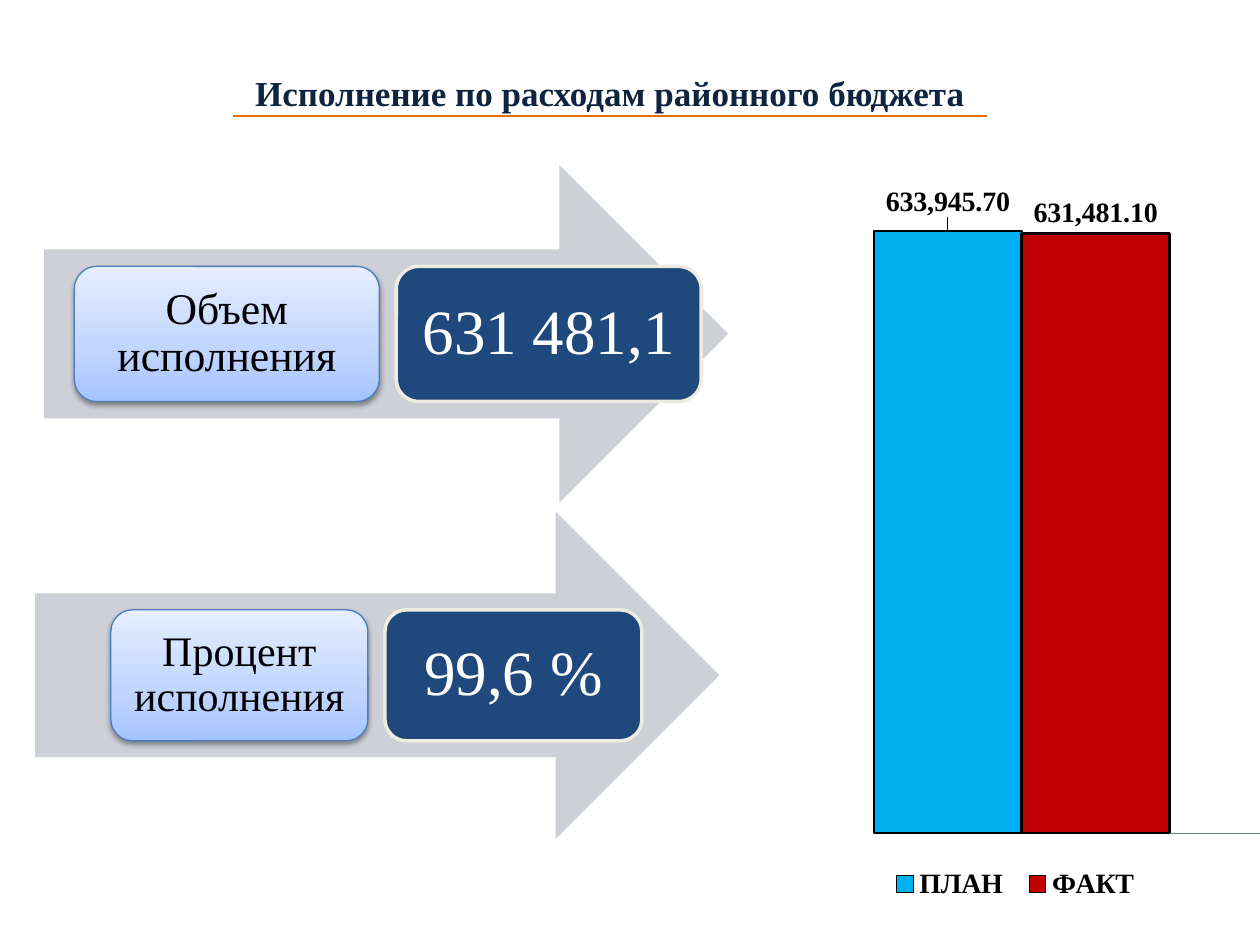
from dataclasses import dataclass

from pptx import Presentation, util as u
from pptx.chart.data import CategoryChartData
from pptx.dml.color import RGBColor
from pptx.enum import chart as ch, shapes as sh, text as tx
from pptx.oxml import parse_xml
from pptx.oxml.ns import nsdecls, qn

COLS, ROWS = 100, 75
FACE = "Times New Roman"
HUES = {
    "title": "0F243E", "rule": "E46C0A", "arrow": "CDD0D7",
    "edge": "4B7EBC", "navy": "1F497D", "cream": "EEECE1",
    "plan": "00B0F0", "fact": "C00000", "rest": "9BBB59",
    "axis": "6B7B7B", "black": "000000", "white": "FFFFFF",
}
BLEND = ((0, "A4C4FF"), (35, "BFD4FF"), (100, "E6EEFF"))
FORM = "#,##0.00"


@dataclass
class Band:
    left: float
    top: float
    high: float
    start: float
    wide: float
    name: str
    size: int
    value: str


@dataclass
class Bar:
    name: str
    value: float
    hue: str
    edge: str
    line: float


BANDS = (
    Band(2.8, 40.6, 26, 8.8, 20.4, "Процент исполнения", 24, "99,6 %"),
    Band(3.5, 13.1, 26.8, 5.9, 24.2, "Объем исполнения", 25, "631 481,1"),
)
BARS = (
    Bar("ПЛАН", 633945.7, "plan", "black", 1),
    Bar("ФАКТ", 631481.1, "fact", "black", 1.5),
    Bar("Series 3", 0, "rest", "axis", 0.25),
)

deck = Presentation()
deck.slide_width, deck.slide_height = u.Inches(10), u.Inches(7.5)
slide = deck.slides.add_slide(deck.slide_layouts[6])


def col(n: float) -> int:
    return int(deck.slide_width * n / COLS)


def row(n: float) -> int:
    return int(deck.slide_height * n / ROWS)


def area(x: float, y: float, w: float, h: float) -> tuple:
    return col(x), row(y), col(w), row(h)


def rgb(key: str) -> RGBColor:
    return RGBColor.from_string(HUES[key])


def style(font, size: float, hue: str, bold: bool = False) -> None:
    font.name, font.size, font.bold = FACE, u.Pt(size), bold
    font.color.rgb = rgb(hue)


def stroke(line, hue: str, width: float) -> None:
    line.color.rgb, line.width = rgb(hue), u.Pt(width)


def paint(shape, hue: str) -> None:
    shape.fill.solid()
    shape.fill.fore_color.rgb = rgb(hue)


def write(shape, words: str, size: float, hue: str, pad: float) -> None:
    frame = shape.text_frame
    frame.text = words
    frame.word_wrap = True
    frame.vertical_anchor = tx.MSO_ANCHOR.MIDDLE
    frame.margin_left = frame.margin_right = u.Inches(pad)
    frame.margin_top = frame.margin_bottom = u.Inches(pad)
    para = frame.paragraphs[0]
    para.alignment = tx.PP_ALIGN.CENTER
    para.line_spacing = 0.9
    style(para.runs[0].font, size, hue)


def gloss(shape) -> None:
    stops = "".join(
        f'<a:gs pos="{at * 1000}"><a:srgbClr val="{hue}"/></a:gs>'
        for at, hue in BLEND)
    props = shape._element.spPr
    props.insert(2, parse_xml(
        f'<a:gradFill {nsdecls("a")} rotWithShape="1"><a:gsLst>{stops}</a:gsLst>'
        '<a:lin ang="16200000" scaled="0"/></a:gradFill>'))
    props.find(qn("a:effectLst")).append(parse_xml(
        f'<a:outerShdw {nsdecls("a")} blurRad="{u.Pt(3.1)}" dist="{u.Pt(1.6)}" '
        'dir="5400000" rotWithShape="0"><a:srgbClr val="000000">'
        '<a:alpha val="38000"/></a:srgbClr></a:outerShdw>'))


def draw_band(band: Band) -> None:
    group = slide.shapes.add_group_shape().shapes
    arrow = group.add_shape(
        sh.MSO_SHAPE.RIGHT_ARROW, *area(band.left, band.top, 54.3, band.high))
    arrow.shadow.inherit = False
    paint(arrow, "arrow")
    arrow.line.fill.background()
    top, high = band.top + band.high * 0.3, band.high * 0.4
    label, total = (
        group.add_shape(sh.MSO_SHAPE.ROUNDED_RECTANGLE,
                        *area(band.start + i * (band.wide + 1.35), top, band.wide, high))
        for i in range(2))
    for box in (label, total):
        box.shadow.inherit = False
    gloss(label)
    stroke(label.line, "edge", 0.75)
    write(label, band.name, band.size, "black", 0.05)
    paint(total, "navy")
    stroke(total.line, "cream", 2)
    write(total, band.value, 36, "white", 0.1)


def place(x: float, y: float, w: float = 0, h: float = 0, inner: bool = False):
    parts = [("layoutTarget", "inner")] if inner else []
    parts += [("xMode", "edge"), ("yMode", "edge")] if w else []
    parts += [("x", x), ("y", y)]
    parts += [("w", w), ("h", h)] if w else []
    body = "".join(f'<c:{tag} val="{val}"/>' for tag, val in parts)
    return parse_xml(f'<c:layout {nsdecls("c")}><c:manualLayout>{body}'
                     '</c:manualLayout></c:layout>')


def draw_chart() -> None:
    data = CategoryChartData(number_format=FORM)
    data.categories = ["1"]
    for bar in BARS:
        data.add_series(bar.name, [bar.value])
    chart = slide.shapes.add_chart(
        ch.XL_CHART_TYPE.COLUMN_CLUSTERED, *area(57.9, 5.2, 56.7, 67.7), data).chart
    style(chart.font, 16, "black")
    chart.has_title = False
    axis = chart.value_axis
    axis.minimum_scale, axis.maximum_scale = 0, 700000
    axis.has_major_gridlines = False
    axis.visible = chart.category_axis.visible = False
    plot = chart.plots[0]
    plot.gap_width, plot.overlap, plot.vary_by_categories = 150, 0, False
    for bar, series in zip(BARS, plot.series):
        paint(series.format, bar.hue)
        stroke(series.format.line, bar.edge, bar.line)
        if bar.value:
            labels = series.data_labels
            labels.show_value = True
            labels.number_format, labels.number_format_is_linked = FORM, False
            labels.position = ch.XL_LABEL_POSITION.OUTSIDE_END
            style(labels.font, 16, "black", True)
    mark = plot.series[0].points[0].data_label
    mark.position = ch.XL_LABEL_POSITION.OUTSIDE_END
    style(mark.font, 16, "black", True)
    node = plot.series[0]._element.find(".//" + qn("c:dLbl"))
    node.insert(1, place(0, -0.01))
    node.insert(2, parse_xml(
        f'<c:numFmt {nsdecls("c")} formatCode="{FORM}" sourceLinked="0"/>'))

    chart.has_legend = True
    legend = chart.legend
    legend.position = ch.XL_LEGEND_POSITION.BOTTOM
    legend.include_in_layout = False
    style(legend.font, 16, "black", True)
    root = legend._element
    for old in root.findall(qn("c:layout")):
        root.remove(old)
    root.insert(1, parse_xml(
        f'<c:legendEntry {nsdecls("c")}><c:idx val="2"/><c:delete val="1"/>'
        '</c:legendEntry>'))
    root.insert(2, place(0.21, 0.93, 0.38, 0.06))
    field = chart._chartSpace.chart.plotArea
    for old in field.findall(qn("c:layout")):
        field.remove(old)
    field.insert(0, place(0.047, 0.121, 0.931, 0.779, True))


def draw_title() -> None:
    box = slide.shapes.add_textbox(*area(16.9, 5.2, 63, 4.4))
    frame = box.text_frame
    frame.word_wrap = True
    frame.text = "Исполнение по расходам районного бюджета"
    para = frame.paragraphs[0]
    para.alignment = tx.PP_ALIGN.CENTER
    style(para.runs[0].font, 20, "title", True)
    rule = slide.shapes.add_connector(
        sh.MSO_CONNECTOR.STRAIGHT, col(18.5), row(9.2), col(78.3), row(9.2))
    stroke(rule.line, "rule", 1.5)
    rule._element.spPr.append(parse_xml(f'<a:effectLst {nsdecls("a")}/>'))


draw_title()
draw_band(BANDS[0])
draw_chart()
draw_band(BANDS[1])
deck.save("out.pptx")
